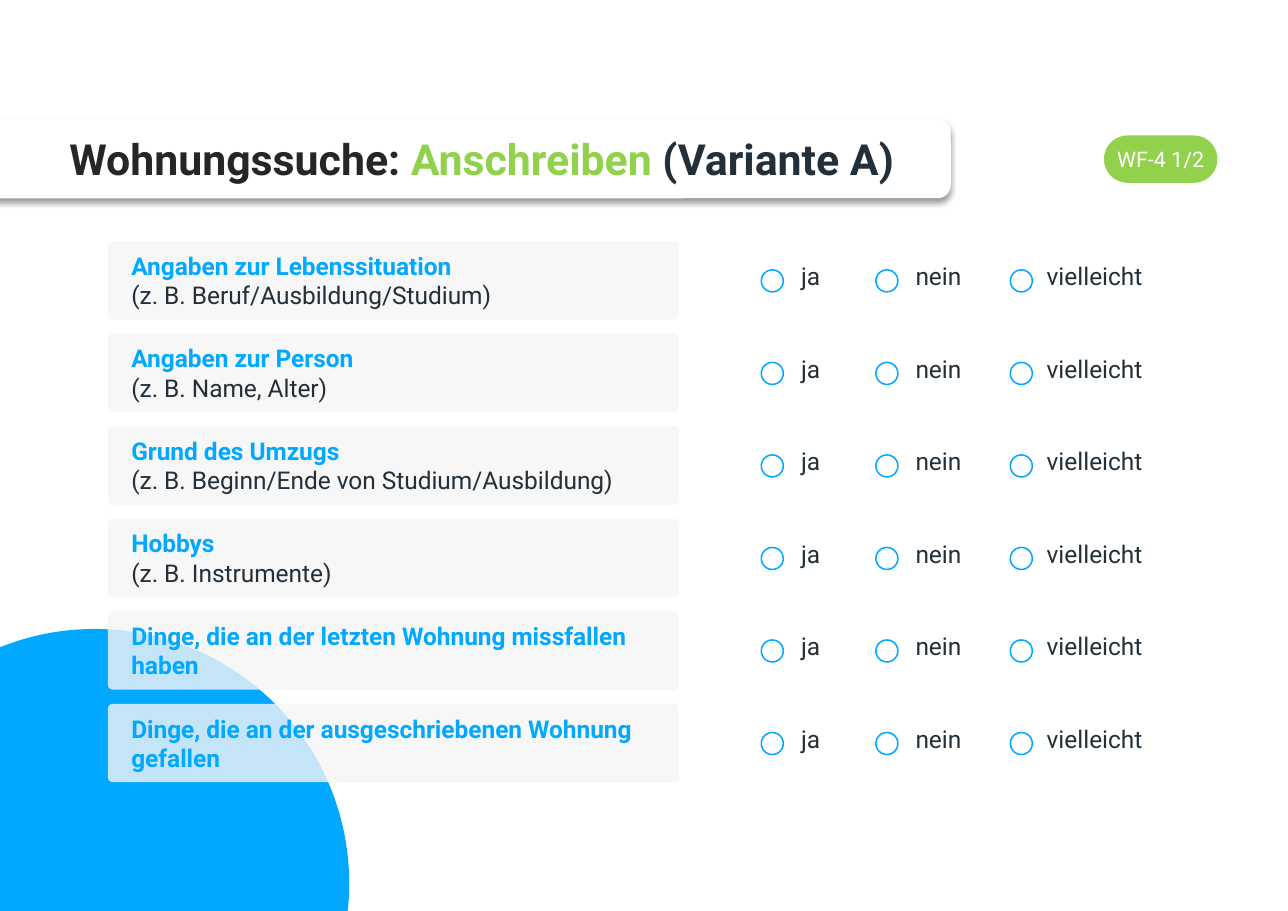
from dataclasses import dataclass
from math import acos, asin, cos, pi, sin

from lxml.etree import SubElement
from pptx import Presentation
from pptx.dml.color import RGBColor
from pptx.enum.shapes import MSO_SHAPE
from pptx.enum.text import MSO_ANCHOR, MSO_AUTO_SIZE, PP_ALIGN
from pptx.oxml.ns import qn
from pptx.util import Inches, Pt


@dataclass(frozen=True)
class Theme:
    font: str = "Roboto"
    blue: str = "00A8FF"
    green: str = "91D14C"
    dark: str = "243039"
    black: str = "262626"
    grey: str = "F5F5F5"
    white: str = "FFFFFF"
    title: int = 28
    body: int = 16
    tag: int = 14


THEME = Theme()
WIDTH, HEIGHT = 11.69, 8.27
TOP, STEP = 2.19, 0.84

TOPICS = [
    ("Angaben zur Lebenssituation", "(z. B. Beruf/Ausbildung/Studium)"),
    ("Angaben zur Person", "(z. B. Name, Alter)"),
    ("Grund des Umzugs", "(z. B. Beginn/Ende von Studium/Ausbildung)"),
    ("Hobbys", "(z. B. Instrumente)"),
    ("Dinge, die an der letzten Wohnung missfallen haben", ""),
    ("Dinge, die an der ausgeschriebenen Wohnung gefallen", ""),
]
# Answer, left of its circle, left and width of its label
ANSWERS = [
    ("ja", 6.91, 7.27, 0.39),
    ("nein", 7.95, 8.31, 0.7),
    ("vielleicht", 9.17, 9.5, 1.05),
]


def rgb(code):
    return RGBColor.from_string(code)


def add_box(slide, kind, box, fill, round=None, line=None):
    shape = slide.shapes.add_shape(kind, *map(Inches, box))
    shape.shadow.inherit = False
    shape.fill.solid()
    shape.fill.fore_color.rgb = rgb(fill)
    if round is not None:
        shape.adjustments[0] = round
    if line:
        shape.line.color.rgb = rgb(line)
        shape.line.width = Pt(1)
    else:
        shape.line.fill.background()
    return shape


def set_frame(frame, left=0, right=0, edge=0, anchor=MSO_ANCHOR.MIDDLE):
    frame.word_wrap = True
    frame.auto_size = MSO_AUTO_SIZE.NONE
    frame.vertical_anchor = anchor
    frame.margin_left, frame.margin_right = Inches(left), Inches(right)
    frame.margin_top = frame.margin_bottom = Inches(edge)
    return frame.paragraphs[0]


def set_font(para, size, color=None, bold=None, align=PP_ALIGN.LEFT):
    para.alignment = align
    para.font.name = THEME.font
    para.font.size = Pt(size)
    para.font.bold = bold
    if color:
        para.font.color.rgb = rgb(color)


def add_run(para, text, color):
    run = para.add_run()
    run.text = text
    run.font.color.rgb = rgb(color)
    return run


def add_alpha(color, share):
    SubElement(color, qn("a:alpha"), val=str(share * 1000))


def add_shadow(shape):
    effects = shape._element.spPr.find(qn("a:effectLst"))
    outer = SubElement(effects, qn("a:outerShdw"), blurRad=str(Pt(4)),
                       dist=str(Pt(3)), dir="5400000", rotWithShape="0")
    add_alpha(SubElement(outer, qn("a:srgbClr"), val="000000"), 40)


def add_disc(slide):
    # Circle cut off by the left and bottom edges of the page
    x, y, r = 0.86, 8.02, 2.31
    start, end = -acos(x / r) - pi, asin((HEIGHT - y) / r)
    start += 2 * acos(x / r)
    count = 90
    turns = [start + (end - start) * i / count for i in range(count + 1)]
    points = [(Inches(x + r * cos(t)), Inches(y + r * sin(t))) for t in turns]
    path = slide.shapes.build_freeform(0, Inches(HEIGHT))
    path.add_line_segments(points, close=True)
    disc = path.convert_to_shape()
    disc.shadow.inherit = False
    disc.fill.solid()
    disc.fill.fore_color.rgb = rgb(THEME.blue)
    disc.line.fill.background()


def add_title(slide):
    plate = add_box(slide, MSO_SHAPE.ROUNDED_RECTANGLE,
                    (-0.83, 1.08, 9.46, 0.72), THEME.white, 0.167)
    add_shadow(plate)
    title = slide.shapes.title
    title.left, title.top = Inches(0.63), Inches(1.08)
    title.width, title.height = Inches(8), Inches(0.72)
    para = set_frame(title.text_frame, 0, 0.1, 0.05)
    set_font(para, THEME.title, bold=True)
    add_run(para, "Wohnungssuche: ", THEME.black)
    add_run(para, "Anschreiben ", THEME.green)
    add_run(para, "(Variante A)", THEME.dark)
    plate._element.addnext(title._element)


def add_tag(slide):
    tag = add_box(slide, MSO_SHAPE.ROUNDED_RECTANGLE,
                  (10.02, 1.23, 1.03, 0.43), THEME.green, 0.5)
    para = set_frame(tag.text_frame, edge=0.05)
    para.text = "WF-4 1/2"
    set_font(para, THEME.tag, THEME.white, align=PP_ALIGN.CENTER)


def add_topic(slide, top, head, note):
    card = add_box(slide, MSO_SHAPE.ROUNDED_RECTANGLE,
                   (0.98, top, 5.18, 0.71), THEME.grey, 0.058)
    add_alpha(card._element.spPr.find(".//" + qn("a:srgbClr")), 80)
    para = set_frame(card.text_frame, 0.2, 0.12)
    set_font(para, THEME.body)
    add_run(para, head, THEME.blue).font.bold = True
    if note:
        para.add_line_break()
        add_run(para, note, THEME.dark)


def add_answer(slide, top, text, spot, left, width):
    add_box(slide, MSO_SHAPE.OVAL, (spot, top + 0.26, 0.2, 0.2),
            THEME.white, line=THEME.blue)
    label = slide.shapes.add_textbox(
        *map(Inches, (left, top + 0.18, width, 0.37)))
    para = set_frame(label.text_frame, right=0.05, anchor=MSO_ANCHOR.TOP)
    para.text = text
    set_font(para, THEME.body, THEME.dark)


def main():
    deck = Presentation()
    deck.slide_width, deck.slide_height = Inches(WIDTH), Inches(HEIGHT)
    slide = deck.slides.add_slide(deck.slide_layouts[5])

    # Background and heading
    add_disc(slide)
    add_tag(slide)
    add_title(slide)

    # Topics with their answers
    for row, (head, note) in enumerate(TOPICS):
        top = TOP + row * STEP
        add_topic(slide, top, head, note)
        for answer in ANSWERS:
            add_answer(slide, top, *answer)

    deck.save("out.pptx")


if __name__ == "__main__":
    main()
